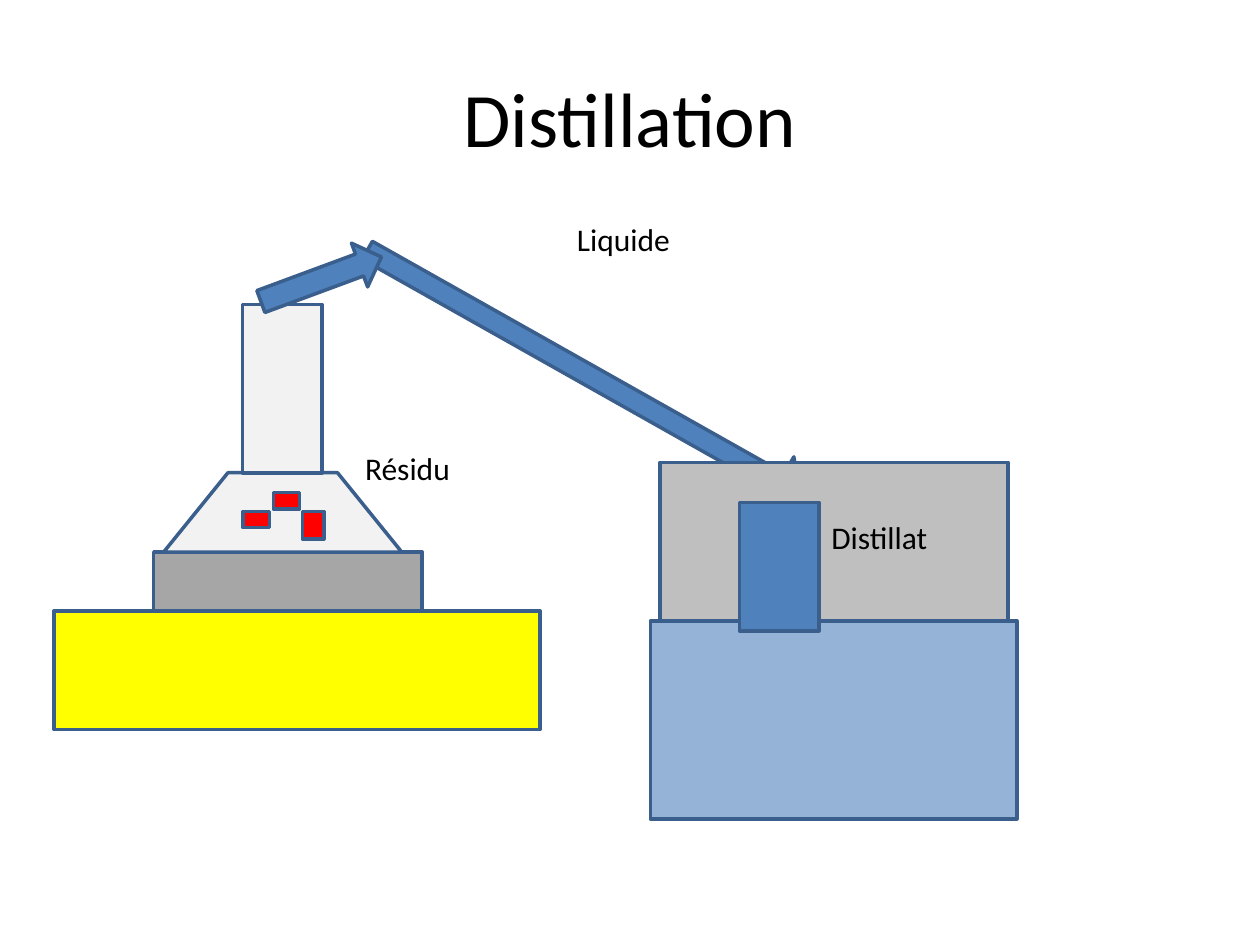
from lxml.etree import SubElement
from pptx import Presentation
from pptx.dml.color import RGBColor
from pptx.enum.shapes import MSO_CONNECTOR, MSO_SHAPE as Shape
from pptx.enum.text import MSO_ANCHOR, MSO_AUTO_SIZE, PP_ALIGN
from pptx.oxml.ns import qn
from pptx.util import Cm, Pt

FONT = "Calibri"
COLORS = {
    "text": "000000", "outline": "3A5F8C", "joint": "4B7EBC",
    "flame": "FFFF00", "heater": "A6A6A6", "glass": "F2F2F2",
    "vapour": "4F81BD", "vessel": "BFBFBF", "water": "95B3D7",
    "residue": "FF0000",
}
TITLE = ("Distillation", (1.27, 0.76, 22.86, 3.18))
JOINT = (5.38, 5.94, 6.27, 5.94)

# kind, (left, top, width, height) in cm, colour, rotation, adjustments
APPARATUS = [
    (Shape.RECTANGLE, (1.09, 12.32, 9.8, 2.39), "flame", 0, ()),
    (Shape.RECTANGLE, (3.1, 11.13, 5.41, 1.19), "heater", 0, ()),
    (Shape.TRAPEZOID, (3.3, 9.53, 4.8, 1.6), "glass", 0, (0.81,)),
    (Shape.FLOWCHART_PROCESS, (3.99, 7.04, 3.4, 1.6), "glass", 90, ()),
    (Shape.RIGHT_ARROW, (6.76, 6.91, 10.01, 1.19), "vapour", 29.4, (0.35, 0.4)),
    (Shape.RIGHT_ARROW, (5.18, 5.16, 2.59, 0.94), "vapour", 339.7, ()),
    (Shape.FLOWCHART_PROCESS, (13.31, 9.32, 7.01, 7.01), "vessel", 0, ()),
    (Shape.RECTANGLE, (13.11, 12.52, 7.39, 3.99), "water", 0, ()),
    (Shape.RECTANGLE, (14.91, 10.13, 1.6, 2.59), "vapour", 0, ()),
    (Shape.RECTANGLE, (5.51, 9.93, 0.53, 0.33), "residue", 0, ()),
    (Shape.RECTANGLE, (4.9, 10.31, 0.53, 0.33), "residue", 0, ()),
    (Shape.RECTANGLE, (6.1, 10.31, 0.43, 0.56), "residue", 0, ()),
]
# text, (left, top, width, height) in cm, left indent in cm
LABELS = [
    ("Liquide", (1.5, 4.32, 22.2, 1.02), 9.88),
    ("Distillat", (16.51, 10.31, 6.81, 1.02), 0),
    ("Résidu", (7.11, 8.92, 6.81, 1.02), 0),
]


def color(name):
    return RGBColor.from_string(COLORS[name])


def lengths(values):
    return [Cm(value) for value in values]


def add_text(paragraph, text, size):
    run = paragraph.add_run()
    run.text = text
    run.font.name = FONT
    run.font.size = Pt(size)
    run.font.color.rgb = color("text")


def add_title(slide, text, box):
    title = slide.shapes.title
    title.left, title.top, title.width, title.height = lengths(box)
    title.text_frame.vertical_anchor = MSO_ANCHOR.MIDDLE
    paragraph = title.text_frame.paragraphs[0]
    paragraph.alignment = PP_ALIGN.CENTER
    add_text(paragraph, text, 44)


def add_joint(slide, ends):
    line = slide.shapes.add_connector(MSO_CONNECTOR.STRAIGHT, *lengths(ends))
    line.line.color.rgb = color("joint")
    line.line.width = Pt(0.75)
    SubElement(line._element.spPr, qn("a:effectLst"))


def add_part(slide, kind, box, fill, rotation, adjustments):
    shape = slide.shapes.add_shape(kind, *lengths(box))
    shape.shadow.inherit = False
    shape.rotation = rotation
    for index, value in enumerate(adjustments):
        shape.adjustments[index] = value
    shape.fill.solid()
    shape.fill.fore_color.rgb = color(fill)
    shape.line.color.rgb = color("outline")
    shape.line.width = Pt(2)


def add_label(slide, text, box, indent):
    frame = slide.shapes.add_textbox(*lengths(box)).text_frame
    frame.word_wrap = True
    frame.auto_size = MSO_AUTO_SIZE.SHAPE_TO_FIT_TEXT
    paragraph = frame.paragraphs[0]
    if indent:
        paragraph._p.get_or_add_pPr().set("marL", str(Cm(indent)))
    add_text(paragraph, text, 18)


def main():
    presentation = Presentation()
    presentation.slide_width, presentation.slide_height = Cm(25.4), Cm(19.05)
    slide = presentation.slides.add_slide(presentation.slide_layouts[5])
    add_title(slide, *TITLE)
    add_joint(slide, JOINT)
    for part in APPARATUS:
        add_part(slide, *part)
    for label in LABELS:
        add_label(slide, *label)
    presentation.save("out.pptx")


if __name__ == "__main__":
    main()
